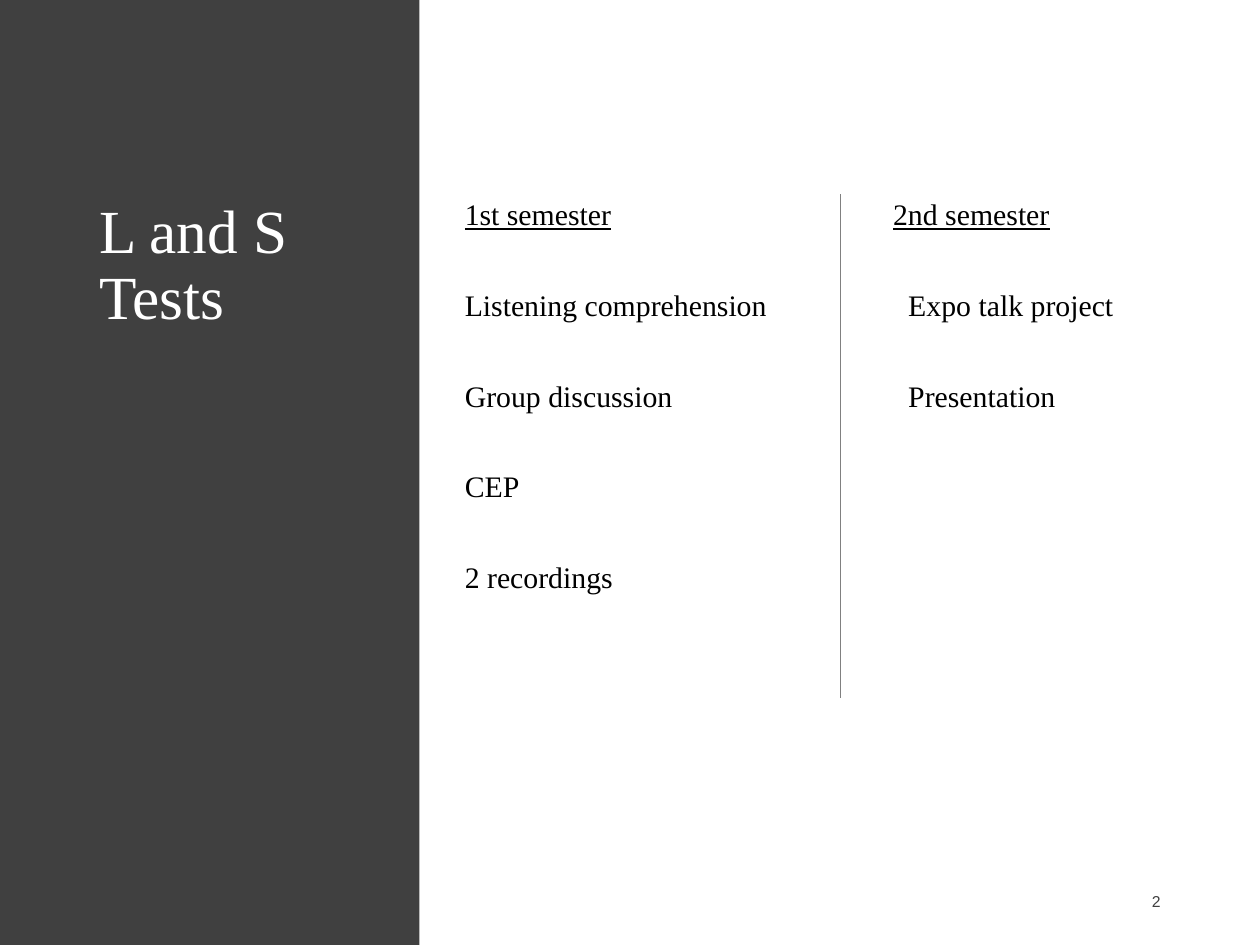
from pptx import Presentation
from pptx.dml.color import RGBColor
from pptx.enum.shapes import MSO_CONNECTOR, MSO_SHAPE
from pptx.enum.text import MSO_ANCHOR, PP_ALIGN
from pptx.oxml.ns import qn
from pptx.util import Inches, Pt
from lxml import etree

RECTANGLE = MSO_SHAPE.RECTANGLE
STRAIGHT = MSO_CONNECTOR.STRAIGHT
TOP, MIDDLE = MSO_ANCHOR.TOP, MSO_ANCHOR.MIDDLE
LEFT, RIGHT = PP_ALIGN.LEFT, PP_ALIGN.RIGHT

COLORS = {"panel": "404040", "title": "FFFFFF", "body": "000000", "divider": "808080"}
SERIF = "Times New Roman"
CONTENT_TOP, CONTENT_HEIGHT = 1.54, 4.77


def add_text_box(slide, left, top, width, height, anchor=TOP):
    box = slide.shapes.add_textbox(Inches(left), Inches(top), Inches(width), Inches(height))
    box.text_frame.word_wrap = True
    box.text_frame.vertical_anchor = anchor
    return box.text_frame


def write_paragraph(paragraph, text, color, font, paragraph_format):
    for name, value in paragraph_format.items():
        setattr(paragraph, name, value)
    run = paragraph.add_run()
    run.text = text
    run.font.color.rgb = RGBColor.from_string(COLORS[color])
    for name, value in font.items():
        setattr(run.font, name, value)


presentation = Presentation()
presentation.slide_width = Inches(10)
presentation.slide_height = Inches(7.5)
slide = presentation.slides.add_slide(presentation.slide_layouts[6])

panel = slide.shapes.add_shape(RECTANGLE, 0, 0, Inches(3.33), Inches(7.5))
panel.shadow.inherit = False
panel.fill.solid()
panel.fill.fore_color.rgb = RGBColor.from_string(COLORS["panel"])
panel.line.fill.background()

title = add_text_box(slide, 0.69, CONTENT_TOP, 2.38, CONTENT_HEIGHT)
write_paragraph(title.paragraphs[0], "L and S Tests", "title",
                {"name": SERIF, "size": Pt(35)}, {"line_spacing": 0.9})

divider = slide.shapes.add_connector(STRAIGHT, Inches(6.67), Inches(CONTENT_TOP),
                                     Inches(6.67), Inches(CONTENT_TOP + 4))
divider.line.color.rgb = RGBColor.from_string(COLORS["divider"])
divider.line.width = Pt(1)
etree.SubElement(divider.element.spPr, qn("a:effectLst"))

semesters = [
    (3.59, 2.81, 0, 0, ["1st semester", "Listening comprehension", "Group discussion",
                        "CEP", "2 recordings"]),
    (6.93, 2.62, 0.06, 0.18, ["2nd semester", "Expo talk project", "Presentation"]),
]
for left, width, heading_indent, item_indent, lines in semesters:
    column = add_text_box(slide, left, CONTENT_TOP, width, CONTENT_HEIGHT)
    for index, line in enumerate(lines):
        is_heading = index == 0
        paragraph = column.paragraphs[0] if is_heading else column.add_paragraph()
        indent = heading_indent if is_heading else item_indent
        paragraph._p.get_or_add_pPr().set("marL", str(Inches(indent)))
        write_paragraph(paragraph, line, "body",
                        {"name": SERIF, "size": Pt(17), "underline": is_heading},
                        {"alignment": LEFT, "line_spacing": 0.9,
                         "space_before": Pt(0 if is_heading else 33.4)})

page_number = add_text_box(slide, 7.55, 6.95, 1.76, 0.4, MIDDLE)
write_paragraph(page_number.paragraphs[0], "2", "panel",
                {"name": "Arial", "size": Pt(9)}, {"alignment": RIGHT})

presentation.save("out.pptx")
